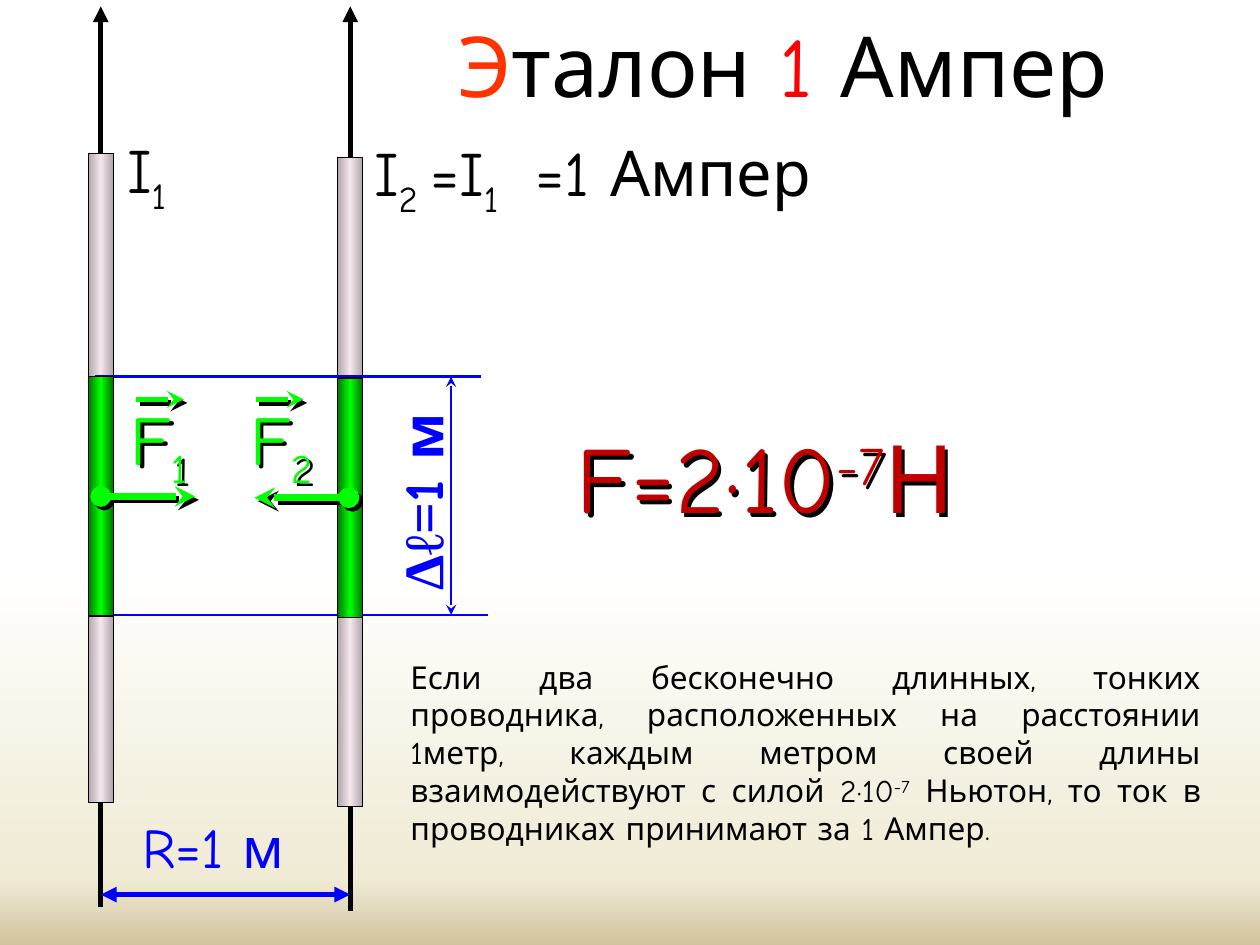
import pptx
import pptx.dml.color
import pptx.enum.shapes
import pptx.enum.text
import pptx.oxml
import pptx.oxml.ns
import pptx.util
from pptx.util import Inches

RGBColor = pptx.dml.color.RGBColor
Align = pptx.enum.text.PP_ALIGN
Anchor = pptx.enum.text.MSO_ANCHOR
qn = pptx.oxml.ns.qn

BLACK = RGBColor(0x00, 0x00, 0x00)
BLUE = RGBColor(0x00, 0x00, 0xFF)
GREEN = RGBColor(0x00, 0xFF, 0x00)
DARK_GREEN = RGBColor(0x00, 0x76, 0x00)
RED = RGBColor(0xFF, 0x00, 0x00)
ORANGE = RGBColor(0xFF, 0x33, 0x00)
DARK_RED = RGBColor(0xC0, 0x00, 0x00)
STEEL = RGBColor(0xAF, 0xA5, 0xAA)
LIGHT_STEEL = RGBColor(0xF4, 0xE7, 0xED)
WHITE = RGBColor(0xFF, 0xFF, 0xFF)
CREAM = RGBColor(0xF0, 0xEB, 0xD5)
SAND = RGBColor(0xD1, 0xC3, 0x9F)

FONT = "Comic Neue"
SERIF = "Times New Roman"
SUBSCRIPT, SUPERSCRIPT = -25, 30
NAMESPACE = pptx.oxml.ns.nsdecls("a")


def set_gradient(element, stops, angle):
    """Replace the stops and direction of the gradient inside an element."""
    gradient = element.find(".//" + qn("a:gradFill"))
    stop_list = gradient.find(qn("a:gsLst"))
    for stop in list(stop_list):
        stop_list.remove(stop)
    for position, color in stops:
        stop_list.append(pptx.oxml.parse_xml(
            f'<a:gs {NAMESPACE} pos="{position * 1000}"><a:srgbClr val="{color}"/></a:gs>'))
    gradient.find(qn("a:lin")).set("ang", str(angle * 60000))


def set_effects(shape, shadow):
    """Give the shape a hard black shadow, or an empty effect list."""
    effect = ('<a:outerShdw blurRad="0" dist="35560" dir="2700000" algn="ctr" rotWithShape="0">'
              '<a:srgbClr val="000000"/></a:outerShdw>') if shadow else ""
    shape.element.spPr.append(
        pptx.oxml.parse_xml(f"<a:effectLst {NAMESPACE}>{effect}</a:effectLst>"))


def add_line(slide, start, end, color, width, head=None, tail=None, shadow=False):
    line = slide.shapes.add_connector(
        pptx.enum.shapes.MSO_CONNECTOR.STRAIGHT,
        Inches(start[0]), Inches(start[1]), Inches(end[0]), Inches(end[1]))
    line.line.color.rgb = color
    line.line.width = pptx.util.Pt(width)
    outline = line.element.spPr.find(qn("a:ln"))
    for tag, kind in (("headEnd", head), ("tailEnd", tail)):
        if kind:
            outline.append(pptx.oxml.parse_xml(f'<a:{tag} {NAMESPACE} type="{kind}"/>'))
    set_effects(line, shadow)


def add_bar(slide, box, edge_color, middle_color):
    """Add a rod shaded from its edges to its middle."""
    bar = slide.shapes.add_shape(
        pptx.enum.shapes.MSO_SHAPE.RECTANGLE, *map(Inches, box))
    bar.shadow.inherit = False
    bar.fill.gradient()
    set_gradient(bar.element, [(0, edge_color), (50, middle_color), (100, edge_color)], 0)
    bar.line.color.rgb = BLACK
    bar.line.width = pptx.util.Pt(0.75)


def add_text(slide, box, parts, size, color=BLACK, align=Align.LEFT,
             anchor=Anchor.TOP, shadow=False):
    """Add one paragraph; each part is (text, baseline percent), returning its runs."""
    text_box = slide.shapes.add_textbox(*map(Inches, box))
    if shadow:
        set_effects(text_box, shadow)
    frame = text_box.text_frame
    frame.word_wrap = True
    frame.vertical_anchor = anchor
    paragraph = frame.paragraphs[0]
    paragraph.alignment = align
    paragraph.font.size = pptx.util.Pt(size)
    paragraph.font.name = FONT
    paragraph.font.color.rgb = color
    for text, baseline in parts:
        run = paragraph.add_run()
        run.text = text
        if baseline:
            run._r.get_or_add_rPr().set("baseline", str(baseline * 1000))
    return text_box, paragraph.runs


def add_conductor(slide, left, top):
    center = left + 0.1
    add_line(slide, (center, top + 5.98), (center, 0.05), BLACK, 3, tail="triangle")
    add_bar(slide, (left, top, 0.2, 5.15), STEEL, LIGHT_STEEL)


def add_title(slide, box):
    parts = [("Э", 0), ("талон ", 0), ("1", 0), (" Ампер", 0)]
    _, runs = add_text(slide, box, parts, 48, align=Align.CENTER, anchor=Anchor.BOTTOM)
    runs[0].font.color.rgb = ORANGE
    runs[2].font.color.rgb = RED


def add_length_dimension(slide, left, top, bottom):
    for y, right in ((top, 3.82), (bottom, 3.87)):
        add_line(slide, (left, y), (right, y), BLUE, 1.5)
    label, runs = add_text(slide, (2.37, 3.5, 1.94, 0.63),
                           [("Δℓ=", 0), ("1 м", 0)], 32, BLUE)
    label.rotation = 270
    label.text_frame.paragraphs[0].font.bold = True
    runs[0].font.name = SERIF
    add_line(slide, (3.58, top), (3.58, bottom), BLUE, 1.5, "stealth", "stealth")


def add_distance_dimension(slide, left, right, y):
    add_text(slide, (left + 0.23, y - 0.7, 1.73, 0.63), [("R=1 м", 0)], 32, BLUE)
    add_line(slide, (left, y), (right, y), BLUE, 3, "triangle", "triangle")


def add_force(slide, start, reach, label_left, index):
    """Add a force arrow and its label with the vector sign above."""
    x, y = start
    add_line(slide, start, (x + reach, y), GREEN, 4, "oval", "stealth", shadow=True)
    add_text(slide, (label_left, 3.09, 0.8, 0.77),
             [("F", 0), (index, SUBSCRIPT)], 40, GREEN, shadow=True)
    add_line(slide, (label_left + 0.14, 3.17), (label_left + 0.52, 3.17),
             GREEN, 3.25, tail="stealth", shadow=True)


def add_current_labels(slide, top):
    add_text(slide, (0.91, top - 0.02, 0.68, 0.7), [("I", 0), ("1", SUBSCRIPT)], 36)
    add_text(slide, (2.87, top, 1.51, 0.7),
             [("I", 0), ("2 ", SUBSCRIPT), ("=I", 0), ("1", SUBSCRIPT)], 36)
    add_text(slide, (4.15, top, 3.5, 0.7), [("=1 Ампер", 0)], 36)


def add_definition(slide, box):
    add_text(slide, box, [
        ("Если два бесконечно длинных, тонких проводника, расположенных на расстоянии "
         "1метр, каждым метром своей длины взаимодействуют с силой 2·10", 0),
        ("-7", SUPERSCRIPT),
        (" Ньютон, то ток в проводниках принимают за 1 Ампер.", 0),
    ], 18, align=Align.JUSTIFY)


def main():
    presentation = pptx.Presentation()
    presentation.slide_width = Inches(10)
    presentation.slide_height = Inches(7.5)
    slide = presentation.slides.add_slide(presentation.slide_layouts[6])
    slide.background.fill.gradient()
    set_gradient(slide.element, [(60, WHITE), (93, CREAM), (100, SAND)], 90)

    conductors = ((0.7, 1.22), (2.68, 1.25))
    for left, top in conductors:
        add_conductor(slide, left, top)
    add_title(slide, (2.44, -0.27, 7.56, 1.23))
    add_length_dimension(slide, 0.75, 2.99, 4.88)
    add_text(slide, (4.48, 3.28, 3.78, 1),
             [("F=2·10", 0), ("-7", SUPERSCRIPT), ("Н", 0)], 54, DARK_RED, shadow=True)
    add_distance_dimension(slide, 0.8, 2.78, 7.1)
    for (left, _), top in zip(conductors, (2.99, 3)):
        add_bar(slide, (left, top, 0.2, 1.9), DARK_GREEN, GREEN)
    add_current_labels(slide, 1.01)
    add_definition(slide, (3.16, 5.17, 6.47, 1.6))
    add_force(slide, (0.8, 3.94), 0.75, 0.94, "1")
    add_force(slide, (2.77, 3.95), -0.75, 1.89, "2")
    presentation.save("out.pptx")


if __name__ == "__main__":
    main()
